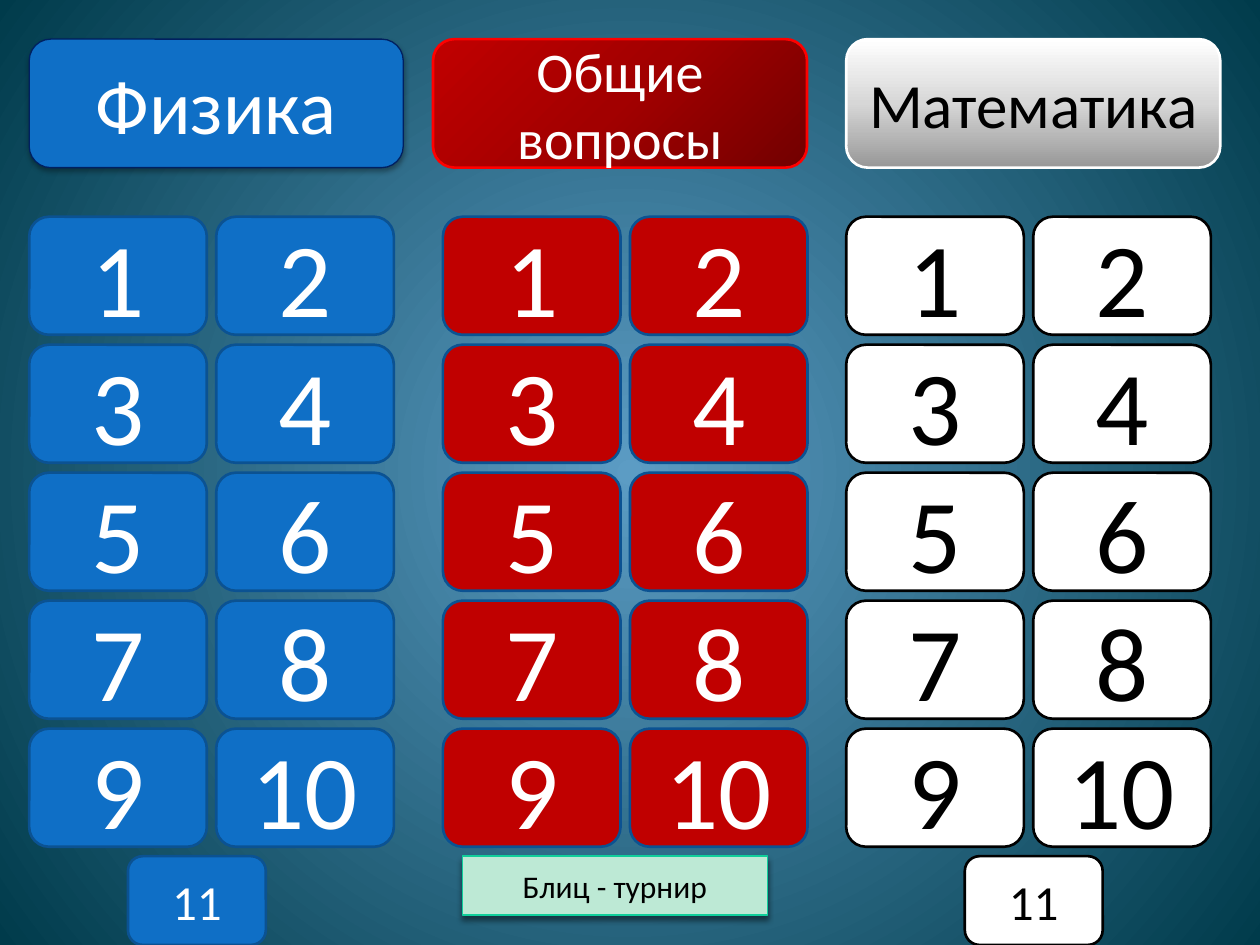
from dataclasses import dataclass

from lxml.etree import SubElement
from pptx import Presentation
from pptx.dml.color import RGBColor
from pptx.enum.shapes import MSO_SHAPE
from pptx.enum.text import MSO_ANCHOR, PP_ALIGN
from pptx.oxml import parse_xml
from pptx.oxml.ns import nsdecls, qn
from pptx.util import Cm, Pt


@dataclass(frozen=True)
class Theme:
    font: str = "Calibri"
    white: str = "FFFFFF"
    black: str = "000000"
    blue: str = "0F6FC6"
    edge: str = "0B5292"
    navy: str = "002060"
    red: str = "C00000"
    rim: str = "FF0000"
    mint: str = "BDE9D5"
    green: str = "10CF9B"
    back: tuple = ((0, "5C9CC4"), (100, "003B4B"))
    steel: tuple = ((0, "979797"), (50, "D7D7D7"), (100, "FFFFFF"))
    wine: tuple = ((0, "720000"), (50, "A20000"), (100, "C00000"))
    digit: int = 60
    extra: int = 28
    blitz: int = 18


UP = '<a:lin ang="16200000" scaled="0"/>'


def circle(left, top, right, bottom):
    """Circular gradient path; its focus is given in percent insets."""
    return (f'<a:path path="circle"><a:fillToRect l="{left * 1000}" t="{top * 1000}" '
            f'r="{right * 1000}" b="{bottom * 1000}"/></a:path>')


def blend(fill, root, stops, way):
    """Give fill, held somewhere under root, the gradient stops and direction."""
    fill.gradient()
    old = next(root.iter(qn("a:gradFill")))
    marks = "".join(f'<a:gs pos="{pos * 1000}"><a:srgbClr val="{color}"/></a:gs>'
                    for pos, color in stops)
    new = parse_xml(f'<a:gradFill {nsdecls("a")} rotWithShape="1">'
                    f'<a:gsLst>{marks}</a:gsLst>{way}</a:gradFill>')
    old.getparent().replace(old, new)


class Board:
    def __init__(self, slide, theme):
        self.slide = slide
        self.theme = theme

    def backdrop(self):
        blend(self.slide.background.fill, self.slide.element,
              self.theme.back, circle(50, 50, 50, 50))

    def box(self, kind, place, text, size, fill, line, ink, width=1.5):
        """Add a labelled box; fill is a colour or a (stops, way) pair."""
        shape = self.slide.shapes.add_shape(kind, *map(Cm, place))
        shape.shadow.inherit = False
        if isinstance(fill, str):
            shape.fill.solid()
            shape.fill.fore_color.rgb = RGBColor.from_string(fill)
        else:
            blend(shape.fill, shape.element, *fill)
        shape.line.color.rgb = RGBColor.from_string(line)
        shape.line.width = Pt(width)
        frame = shape.text_frame
        frame.word_wrap = True
        frame.vertical_anchor = MSO_ANCHOR.MIDDLE
        para = frame.paragraphs[0]
        para.text = text
        para.alignment = PP_ALIGN.CENTER
        para.font.name = self.theme.font
        para.font.size = Pt(size)
        para.font.color.rgb = RGBColor.from_string(ink)
        return shape

    def shade(self, shape, alpha, drop):
        """Cast a soft shadow straight down."""
        effects = next(shape.element.iter(qn("a:effectLst")))
        outer = SubElement(effects, qn("a:outerShdw"), blurRad=str(Pt(3)),
                           dist=str(Pt(drop)), dir="5400000", rotWithShape="0")
        color = SubElement(outer, qn("a:srgbClr"), val=self.theme.black)
        SubElement(color, qn("a:alpha"), val=str(alpha * 1000))

    def title(self, left, text, size, fill, line, ink, width=1.5):
        return self.box(MSO_SHAPE.ROUNDED_RECTANGLE, (left, 0.79, 7.54, 2.59),
                        text, size, fill, line, ink, width)

    def key(self, place, text, size, style):
        self.box(MSO_SHAPE.FLOWCHART_ALTERNATE_PROCESS, place, text, size, *style)

    def grid(self, left, style):
        """Lay out keys 1 to 10 in two columns."""
        for i in range(10):
            row, col = divmod(i, 2)
            place = (left + col * 3.77, 4.37 + row * 2.58, 3.58, 2.38)
            self.key(place, str(i + 1), self.theme.digit, style)

    def last(self, left, style):
        self.key((left, 17.26, 2.78, 1.79), "11", self.theme.extra, style)

    def blitz(self):
        look = self.theme
        button = self.box(MSO_SHAPE.ACTION_BUTTON_CUSTOM, (9.32, 17.26, 6.15, 1.19),
                          "Блиц - турнир", look.blitz, look.mint, look.green,
                          look.black, 0.79)
        self.shade(button, 45, 2.4)


def main():
    deck = Presentation()
    deck.slide_width, deck.slide_height = Cm(25.4), Cm(19.05)
    look = Theme()
    board = Board(deck.slides.add_slide(deck.slide_layouts[6]), look)
    board.backdrop()

    head = board.title(0.59, "Физика", 44, look.blue, look.navy, look.white, 0.75)
    board.shade(head, 35, 2)
    board.title(17.06, "Математика", 36, (look.steel, UP), look.white, look.black)
    board.title(8.73, "Общие вопросы", 32, (look.wine, circle(100, 100, 0, 0)),
                look.rim, look.white)

    blue = (look.blue, look.edge, look.white)
    red = (look.red, look.edge, look.white)
    white = (look.white, look.black, look.black)
    for left, style in ((0.59, blue), (8.93, red), (17.06, white)):
        board.grid(left, style)
    board.last(2.58, blue)
    board.last(19.45, white)
    board.blitz()
    deck.save("out.pptx")


if __name__ == "__main__":
    main()
